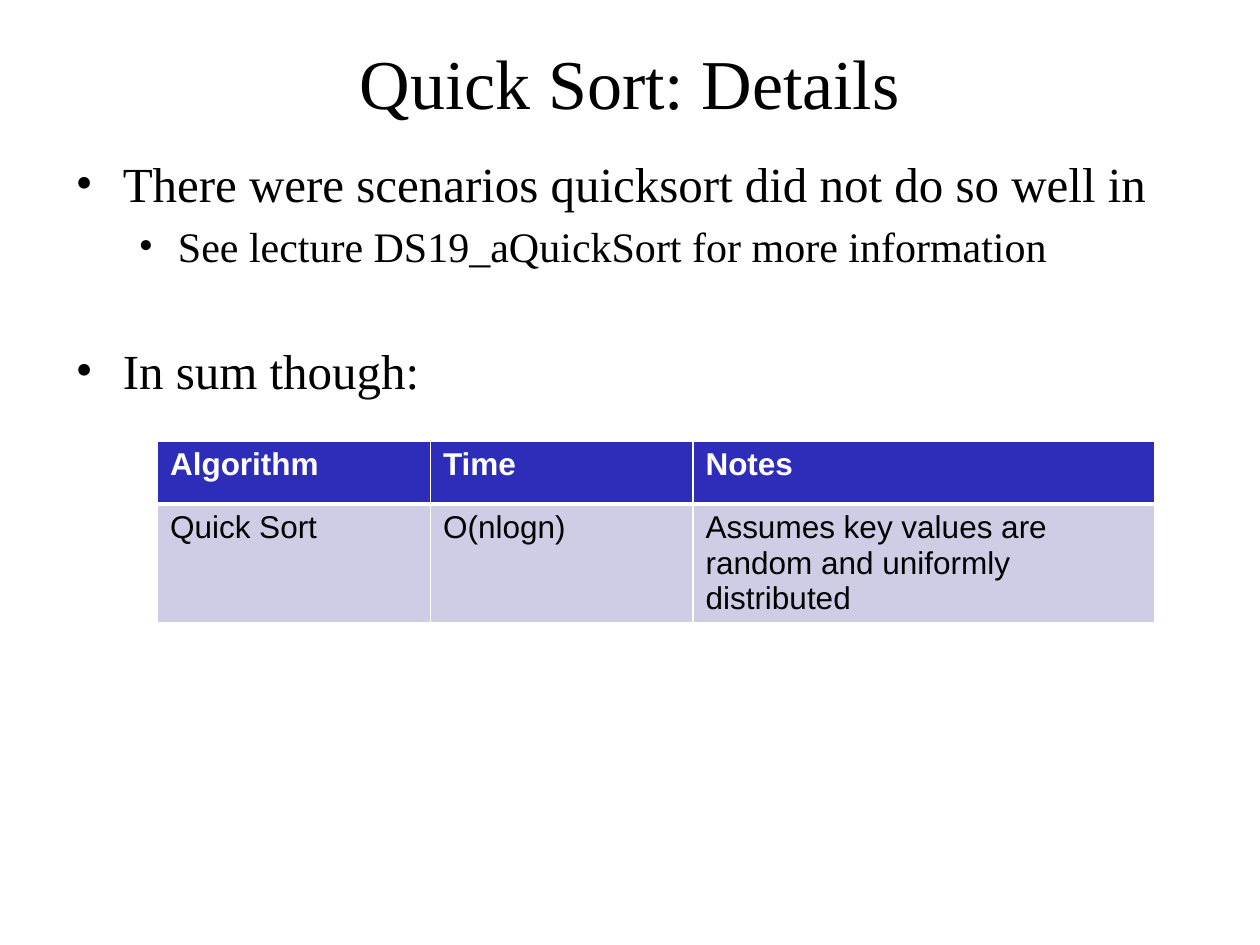
from pptx import Presentation as Deck
from pptx.dml.color import RGBColor as Color
from pptx.enum.text import MSO_ANCHOR as Anchor, MSO_AUTO_SIZE as Fit, PP_ALIGN as Align
from pptx.oxml import parse_xml as to_xml
from pptx.oxml.ns import nsdecls as names
from pptx.util import Pt

BLACK = Color(0, 0, 0)
WHITE = Color(255, 255, 255)
BLUE = Color(0x2D, 0x2D, 0xB9)
PALE = Color(0xCD, 0xCD, 0xE6)

SERIF = {"name": "Times New Roman"}
HEAD = {"name": "Arial", "size": Pt(18), "bold": True}
CELL = {**HEAD, "bold": False}

POINTS = [
    ("There were scenarios quicksort did not do so well in", 0, 5.6),
    ("See lecture DS19_aQuickSort for more information", 1, 4.8),
    ("In sum though:", 0, 40),
]
LEVELS = [(28, 27, -27), (24, 58.5, -22.5)]
ROWS = [
    ("Algorithm", "Time", "Notes"),
    ("Quick Sort", "O(nlogn)", "Assumes key values are random and uniformly distributed"),
]
WIDTHS = [156, 150, 264]
HEIGHTS = [36, 56]


def apply(item, form):
    for key, value in form.items():
        setattr(item, key, value)


def write(para, text, form, color):
    run = para.add_run()
    run.text = text
    apply(run.font, form)
    run.font.color.rgb = color


def place(shape, left, top, width, height):
    apply(shape, {"left": Pt(left), "top": Pt(top),
                  "width": Pt(width), "height": Pt(height)})


def add_title(slide, text):
    title = slide.shapes.title
    place(title, 36, 21.6, 648, 50.4)
    apply(title.text_frame, {"vertical_anchor": Anchor.MIDDLE, "auto_size": Fit.NONE})
    para = title.text_frame.paragraphs[0]
    para.alignment = Align.CENTER
    write(para, text, {**SERIF, "size": Pt(40)}, BLACK)


def add_list(slide, points):
    body = slide.placeholders[1]
    place(body, 36, 84, 648, 150)
    frame = body.text_frame
    apply(frame, {"vertical_anchor": Anchor.TOP, "auto_size": Fit.NONE})
    for i, (text, level, gap) in enumerate(points):
        para = frame.add_paragraph() if i else frame.paragraphs[0]
        size, left, hang = LEVELS[level]
        apply(para, {"level": level, "space_before": Pt(gap)})
        write(para, text, {**SERIF, "size": Pt(size)}, BLACK)
        props = para._p.get_or_add_pPr()
        props.set("marL", str(Pt(left)))
        props.set("indent", str(Pt(hang)))
        props.append(to_xml(f'<a:buFont {names("a")} typeface="Times New Roman"/>'))
        props.append(to_xml(f'<a:buChar {names("a")} char="•"/>'))


def add_edges(cell, widths):
    props = cell._tc.get_or_add_tcPr()
    for i, (side, width) in enumerate(zip("LRTB", widths)):
        props.insert(i, to_xml(
            f'<a:ln{side} {names("a")} w="{Pt(width)}"><a:solidFill>'
            f'<a:srgbClr val="{WHITE}"/></a:solidFill></a:ln{side}>'))


def add_grid(slide, rows):
    frame = slide.shapes.add_table(
        len(rows), len(WIDTHS), Pt(90), Pt(252), Pt(sum(WIDTHS)), Pt(sum(HEIGHTS)))
    table = frame.table
    for col, width in zip(table.columns, WIDTHS):
        col.width = Pt(width)
    for row, height in zip(table.rows, HEIGHTS):
        row.height = Pt(height)
    looks = [(HEAD, WHITE, BLUE, (1, 1, 1, 3)), (CELL, BLACK, PALE, (1, 1, 3, 1))]
    for row, texts, (form, ink, fill, edges) in zip(table.rows, rows, looks):
        for cell, text in zip(row.cells, texts):
            write(cell.text_frame.paragraphs[0], text, form, ink)
            cell.fill.solid()
            cell.fill.fore_color.rgb = fill
            add_edges(cell, edges)


def main():
    deck = Deck()
    apply(deck, {"slide_width": Pt(720), "slide_height": Pt(540)})
    slide = deck.slides.add_slide(deck.slide_layouts[1])
    add_title(slide, "Quick Sort: Details")
    add_list(slide, POINTS)
    add_grid(slide, ROWS)
    deck.save("out.pptx")


if __name__ == "__main__":
    main()
